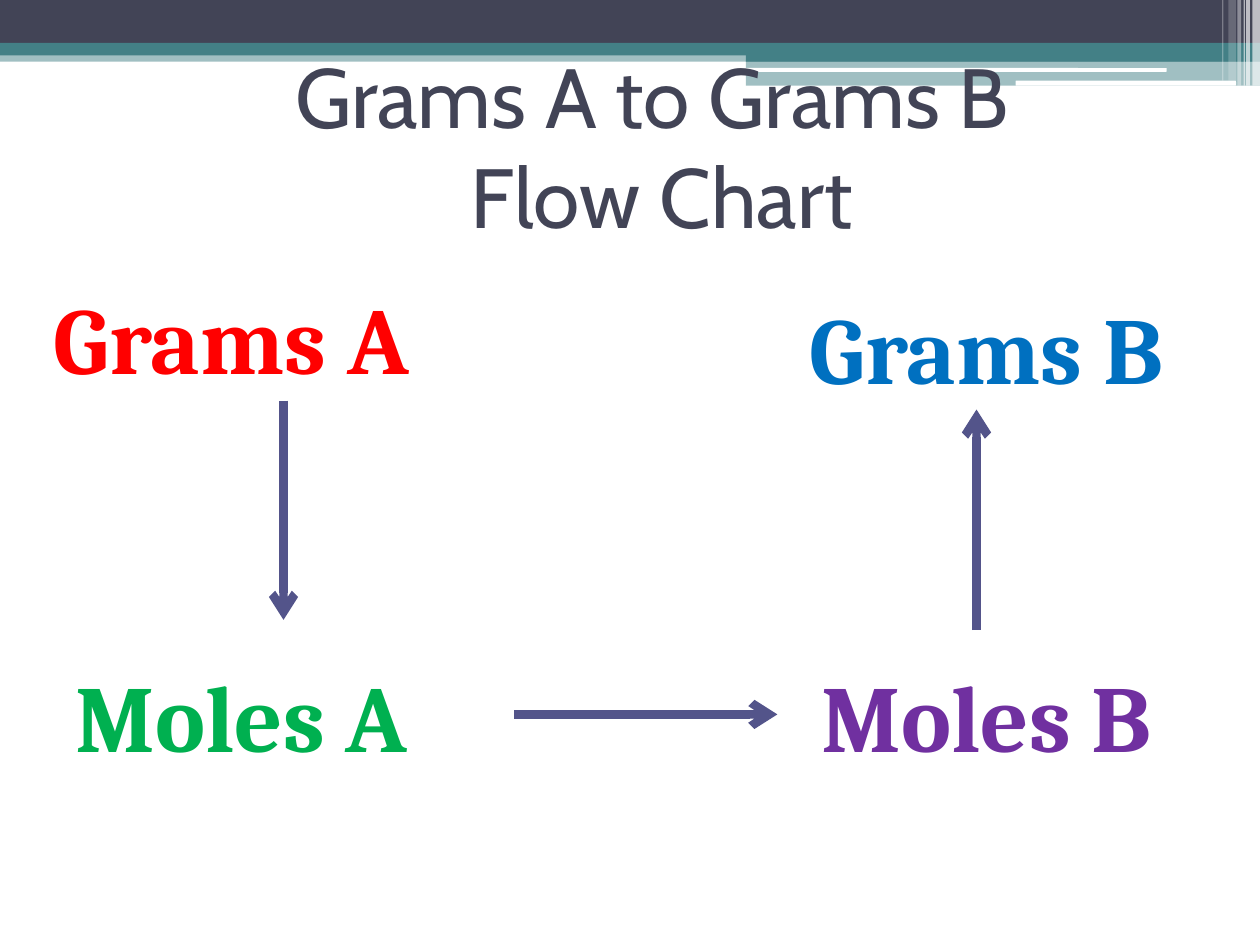
from typing import NamedTuple

from lxml import etree
from pptx import Presentation
from pptx.dml.color import RGBColor
from pptx.enum.shapes import MSO_CONNECTOR, MSO_SHAPE
from pptx.enum.text import MSO_ANCHOR, MSO_AUTO_SIZE, PP_ALIGN
from pptx.oxml.ns import qn
from pptx.util import Inches, Pt

RECTANGLE = MSO_SHAPE.RECTANGLE
ROUNDED = MSO_SHAPE.ROUNDED_RECTANGLE
STRAIGHT = MSO_CONNECTOR.STRAIGHT
BOTTOM_SIDE = 2
TITLE_ONLY = 5

DARK, TEAL, WHITE, ARROW = "424456", "438086", "FFFFFF", "53548A"


class Bar(NamedTuple):
    left: float
    top: float
    width: float
    height: float
    color: str
    opacity: int = 100
    form: MSO_SHAPE = RECTANGLE


class Step(NamedTuple):
    text: str
    left: float
    top: float
    width: float
    color: str


class Arrow(NamedTuple):
    start: tuple[float, float]
    end: tuple[float, float]


BARS = [
    # Full-width header bands
    Bar(0, 0.4, 10, 0.09, TEAL, 50),
    Bar(0, 0, 10, 0.34, DARK),
    Bar(0, 0.34, 10, 0.1, TEAL),
    # Right-hand accent
    Bar(5.92, 0.39, 4.08, 0.1, TEAL),
    Bar(5.92, 0.48, 4.08, 0.2, TEAL, 50),
    Bar(5.91, 0.54, 3.35, 0.03, WHITE, form=ROUNDED),
    Bar(8.06, 0.64, 1.75, 0.04, WHITE, form=ROUNDED),
    # Vertical stripes in the corner
    Bar(9.94, 0, 0.06, 0.68, WHITE, 65),
    Bar(9.89, 0, 0.03, 0.68, WHITE, 65),
    Bar(9.87, 0, 0.01, 0.68, WHITE, 60),
    Bar(9.82, 0, 0.03, 0.68, WHITE, 40),
    Bar(9.75, 0, 0.06, 0.64, WHITE, 20),
    Bar(9.7, 0, 0.01, 0.64, WHITE, 30),
]
STEPS = [
    Step("Grams A", 0.33, 2.17, 3.84, "FF0000"),
    Step("Moles A", 0.5, 5.17, 3.75, "00B050"),
    Step("Moles B", 6.42, 5.17, 3.58, "7030A0"),
    Step("Grams B", 6.33, 2.25, 3.67, "0070C0"),
]
STEP_HEIGHT = 1.01
ARROWS = [
    Arrow((2.25, 3.18), (2.25, 4.92)),
    Arrow((4.08, 5.67), (6.17, 5.67)),
    Arrow((7.75, 5), (7.75, 3.25)),
]


def rgb(color: str) -> RGBColor:
    return RGBColor.from_string(color)


def write(frame, text: str, *, font: str, size: float, color: str,
          bold: bool = False, align=PP_ALIGN.LEFT) -> None:
    """Fill a text frame; a vertical tab in the text is a line break."""
    frame.word_wrap = True
    para = frame.paragraphs[0]
    para.text = text
    para.alignment = align
    for span in para.runs:
        span.font.name = font
        span.font.size = Pt(size)
        span.font.bold = bold
        span.font.color.rgb = rgb(color)


def draw_bar(page, bar: Bar):
    shape = page.shapes.add_shape(bar.form, *map(Inches, bar[:4]))
    shape.shadow.inherit = False
    shape.fill.solid()
    shape.fill.fore_color.rgb = rgb(bar.color)
    shape.line.fill.background()
    if bar.opacity < 100:
        tint = shape._element.spPr.find(qn("a:solidFill"))[0]
        etree.SubElement(tint, qn("a:alpha"), val=str(bar.opacity * 1000))
    return shape


def draw_step(page, step: Step):
    box = page.shapes.add_textbox(*map(Inches, step[1:4]), Inches(STEP_HEIGHT))
    write(box.text_frame, step.text, font="Cambria", size=54,
          color=step.color, bold=True)
    box.text_frame.auto_size = MSO_AUTO_SIZE.SHAPE_TO_FIT_TEXT
    return box


def draw_arrow(page, arrow: Arrow):
    line = page.shapes.add_connector(
        STRAIGHT, *map(Inches, arrow.start + arrow.end))
    line.line.color.rgb = rgb(ARROW)
    line.line.width = Pt(4.75)
    etree.SubElement(line.line._get_or_add_ln(), qn("a:tailEnd"), type="arrow")
    etree.SubElement(line._element.spPr, qn("a:effectLst"))
    return line


def main() -> None:
    deck = Presentation()
    deck.slide_width, deck.slide_height = Inches(10), Inches(7.5)
    page = deck.slides.add_slide(deck.slide_layouts[TITLE_ONLY])

    # Header decoration
    for bar in BARS:
        draw_bar(page, bar)

    # Title, brought in front of the decoration
    title = page.shapes.title
    title.left, title.top = Inches(1), Inches(0.3)
    title.width, title.height = Inches(8.5), Inches(1.7)
    title.text_frame.vertical_anchor = MSO_ANCHOR.MIDDLE
    write(title.text_frame, "Grams A to Grams B \vFlow Chart", font="Cabin",
          size=48, color=DARK, align=PP_ALIGN.CENTER)
    page.shapes._spTree.append(title._element)

    # Flow chart
    boxes = [draw_step(page, step) for step in STEPS]
    lines = [draw_arrow(page, arrow) for arrow in ARROWS]
    lines[0].begin_connect(boxes[0], BOTTOM_SIDE)

    deck.save("out.pptx")


if __name__ == "__main__":
    main()
